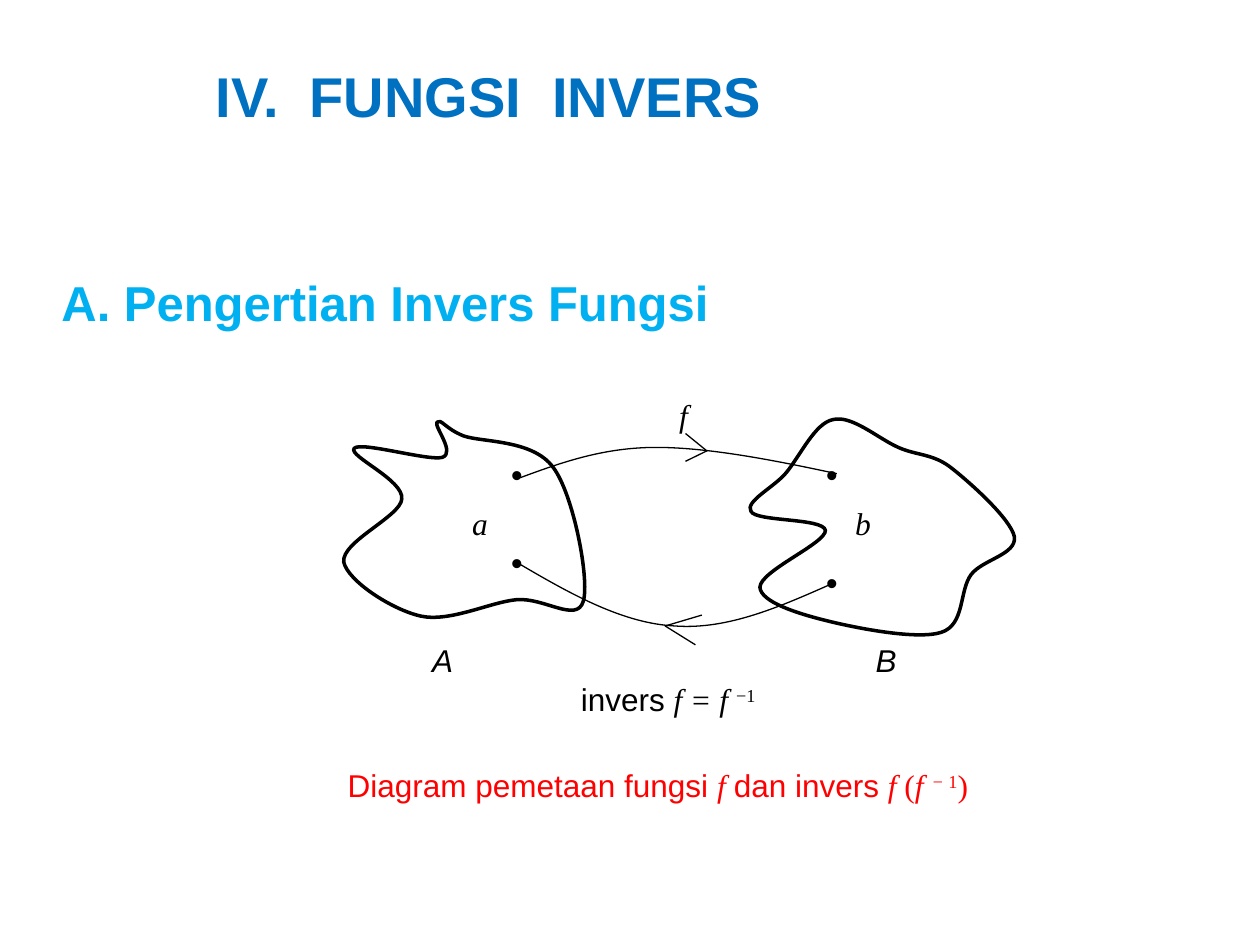
from lxml import etree
from pptx import Presentation
from pptx.dml.color import RGBColor
from pptx.enum.text import MSO_ANCHOR, MSO_AUTO_SIZE, PP_ALIGN
from pptx.oxml.ns import qn
from pptx.util import Cm, Pt

LEFT, TOP, NO_FIT = PP_ALIGN.LEFT, MSO_ANCHOR.TOP, MSO_AUTO_SIZE.NONE
BLACK = RGBColor(0x00, 0x00, 0x00)
WHITE = RGBColor(0xFF, 0xFF, 0xFF)
BLUE = RGBColor(0x00, 0x70, 0xC0)
SKY = RGBColor(0x00, 0xB0, 0xF0)
RED = RGBColor(0xFF, 0x00, 0x00)
SANS, SERIF = "Arial", "Times New Roman"
UNIT = Cm(0.01)

SET_A = [
    (892, 922), (919, 912), (874, 859), (881, 851), (889, 843), (897, 864), (935, 879),
    (973, 892), (1074, 886), (1115, 942), (1156, 996), (1189, 1168), (1176, 1212),
    (1163, 1257), (1097, 1204), (1041, 1209), (988, 1214), (907, 1255), (848, 1242),
    (790, 1229), (701, 1171), (693, 1133), (688, 1092), (808, 1041), (810, 1006),
    (815, 968), (701, 919), (714, 904), (726, 889), (864, 930), (892, 922),
]
SET_B = [
    (1585, 953), (1613, 919), (1643, 853), (1679, 846), (1717, 836), (1770, 884), (1811, 902),
    (1849, 919), (1882, 914), (1920, 945), (1958, 975), (2037, 1046), (2045, 1082),
    (2050, 1118), (1981, 1128), (1958, 1158), (1933, 1191), (1946, 1260), (1897, 1275),
    (1849, 1290), (1730, 1267), (1669, 1252), (1608, 1237), (1534, 1214), (1532, 1184),
    (1532, 1151), (1666, 1095), (1664, 1069), (1659, 1044), (1524, 1052), (1514, 1031),
    (1501, 1011), (1560, 983), (1585, 953),
]
ARC_F = [(1049, 963), (1133, 932), (1217, 902), (1323, 902), (1427, 902), (1557, 927), (1687, 955)]
ARC_INVERSE = [(1049, 1138), (1153, 1199), (1257, 1257), (1361, 1262), (1468, 1270), (1575, 1222), (1679, 1176)]
HEAD_F = [(1382, 874), (1425, 909), (1382, 930)]
HEAD_INVERSE = [(1415, 1240), (1341, 1262), (1402, 1300)]


def add_run(p, text, size=18, font=SANS, color=BLACK, bold=False, italic=False, raised=False):
    """Append a formatted run to a paragraph."""
    r = p.add_run()
    r.text = text
    r.font.size, r.font.name = Pt(size), font
    r.font.bold, r.font.italic = bold, italic
    r.font.color.rgb = color
    if raised:
        r.font._element.set("baseline", "30000")


class Diagram:
    """Hold the current slide and the style of the mapping diagram."""

    def __init__(self, prs):
        self.slide = prs.slides.add_slide(prs.slide_layouts[5])
        self.shapes = self.slide.shapes

    def start_group(self):
        self.shapes = self.slide.shapes.add_group_shape().shapes

    def title(self, text, x, y, w, h, **style):
        sp = self.slide.shapes.title
        sp.left, sp.top, sp.width, sp.height = Cm(x), Cm(y), Cm(w), Cm(h)
        tf = sp.text_frame
        tf.auto_size, tf.vertical_anchor = NO_FIT, TOP
        p = tf.paragraphs[0]
        p.alignment = LEFT
        add_run(p, text, **style)

    def text(self, runs, x, y, w, h=1.02, wrap=False):
        tf = self.shapes.add_textbox(Cm(x), Cm(y), Cm(w), Cm(h)).text_frame
        tf.word_wrap = wrap
        for text, style in runs:
            add_run(tf.paragraphs[0], text, **style)

    def outline(self, points, width=0.75, closed=False, curved=True):
        builder = self.shapes.build_freeform(*points[0], scale=UNIT)
        builder.add_line_segments(points[1:], close=closed)
        sp = builder.convert_to_shape()
        sp.shadow.inherit = False
        sp.line.color.rgb, sp.line.width = BLACK, Pt(width)
        if closed:
            sp.fill.solid()
            sp.fill.fore_color.rgb = WHITE
        else:
            sp.fill.background()
        if curved:
            self.bend(sp)

    def bend(self, sp):
        """Turn each three line segments into one cubic curve."""
        lines = list(sp._element.iter(qn("a:lnTo")))
        for i in range(0, len(lines), 3):
            curve = etree.Element(qn("a:cubicBezTo"))
            lines[i].addprevious(curve)
            for line in lines[i:i + 3]:
                curve.append(line[0])
                line.getparent().remove(line)


def main():
    """Build the inverse function slide."""
    prs = Presentation()
    prs.slide_width, prs.slide_height = Cm(25.4), Cm(19.05)
    d = Diagram(prs)
    d.title("IV.  FUNGSI  INVERS", 4.09, 1.12, 14.55, 1.63, size=32, color=BLUE, bold=True)
    heading = dict(size=28, color=SKY, bold=True)
    d.text([("A. Pengertian Invers Fungsi", heading)], 0.99, 5.36, 13.92, 1.45, wrap=True)

    d.start_group()
    for points in (SET_A, SET_B):
        d.outline(points, width=2, closed=True)
    for x, y in ((10.06, 9.04), (10.06, 10.82), (16.41, 9.04), (16.41, 11.23)):
        d.text([("•", dict(bold=True))], x, y, 0.81, wrap=True)
    for points in (ARC_F, ARC_INVERSE):
        d.outline(points)
    for points in (HEAD_F, HEAD_INVERSE):
        d.outline(points, curved=False)

    math = dict(font=SERIF, italic=True)
    for label, x, y, w, font in (
        ("f", 13.44, 7.85, 0.69, SERIF),
        ("a", 9.27, 10.03, 0.84, SERIF),
        ("b", 16.99, 10.03, 0.84, SERIF),
        ("A", 8.46, 12.8, 0.94, SANS),
        ("B", 17.4, 12.8, 0.94, SANS),
    ):
        d.text([(label, dict(font=font, italic=True))], x, y, w)
    d.text([("invers ", {}), ("f = f ", math), ("−1", dict(font=SERIF, raised=True))],
           11.46, 13.59, 4.11)

    red = dict(color=RED)
    red_math = dict(math, color=RED)
    red_serif = dict(font=SERIF, color=RED)
    d.text([
        ("Diagram pemetaan fungsi ", red), ("f ", red_math), ("dan invers ", red),
        ("f ", red_math), ("(", red_serif), ("f ", red_math),
        ("− ", dict(red_math, raised=True)), ("1", dict(red_serif, raised=True)),
        (")", red_serif),
    ], 6.76, 15.32, 13.89, wrap=True)
    prs.save("out.pptx")


if __name__ == "__main__":
    main()
